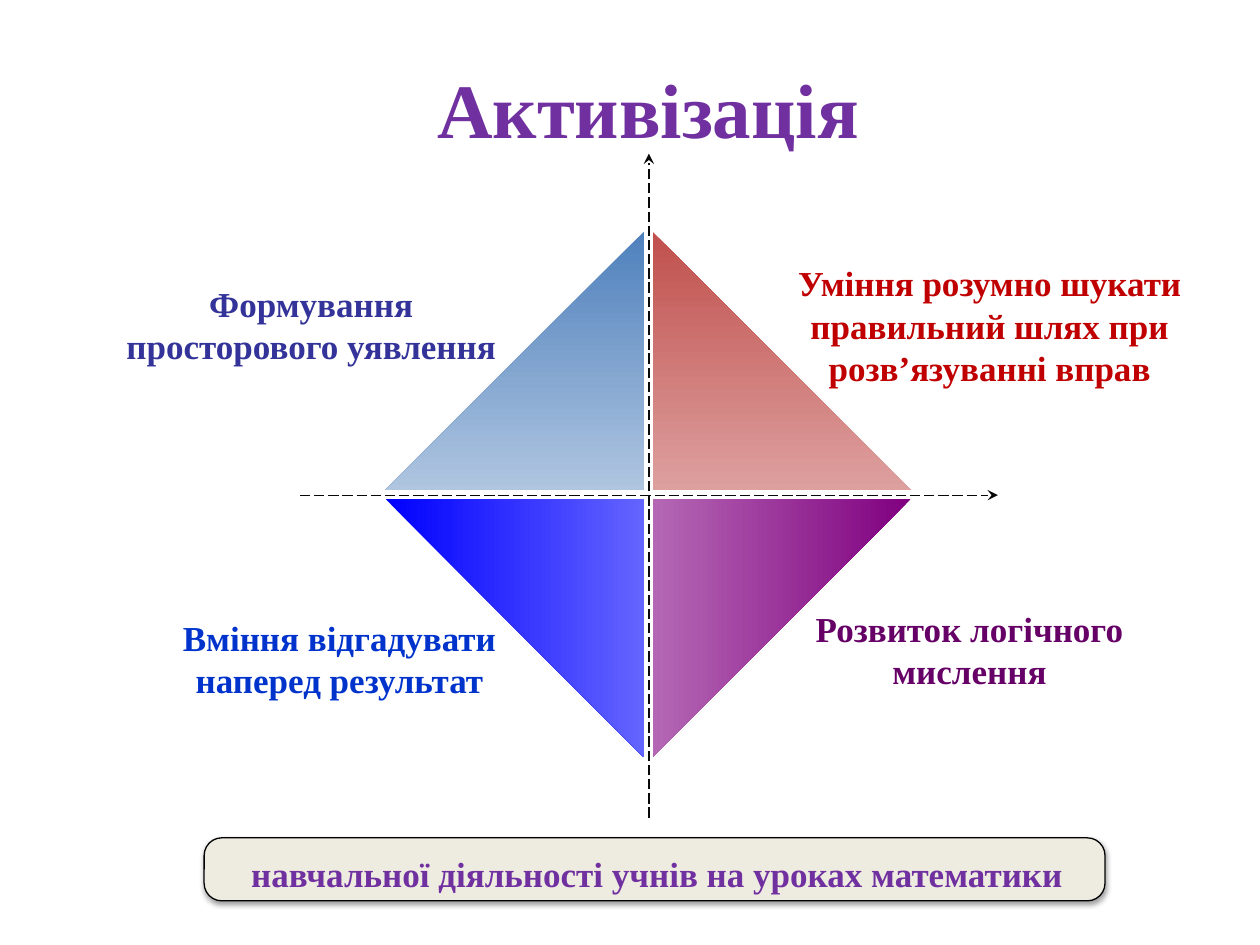
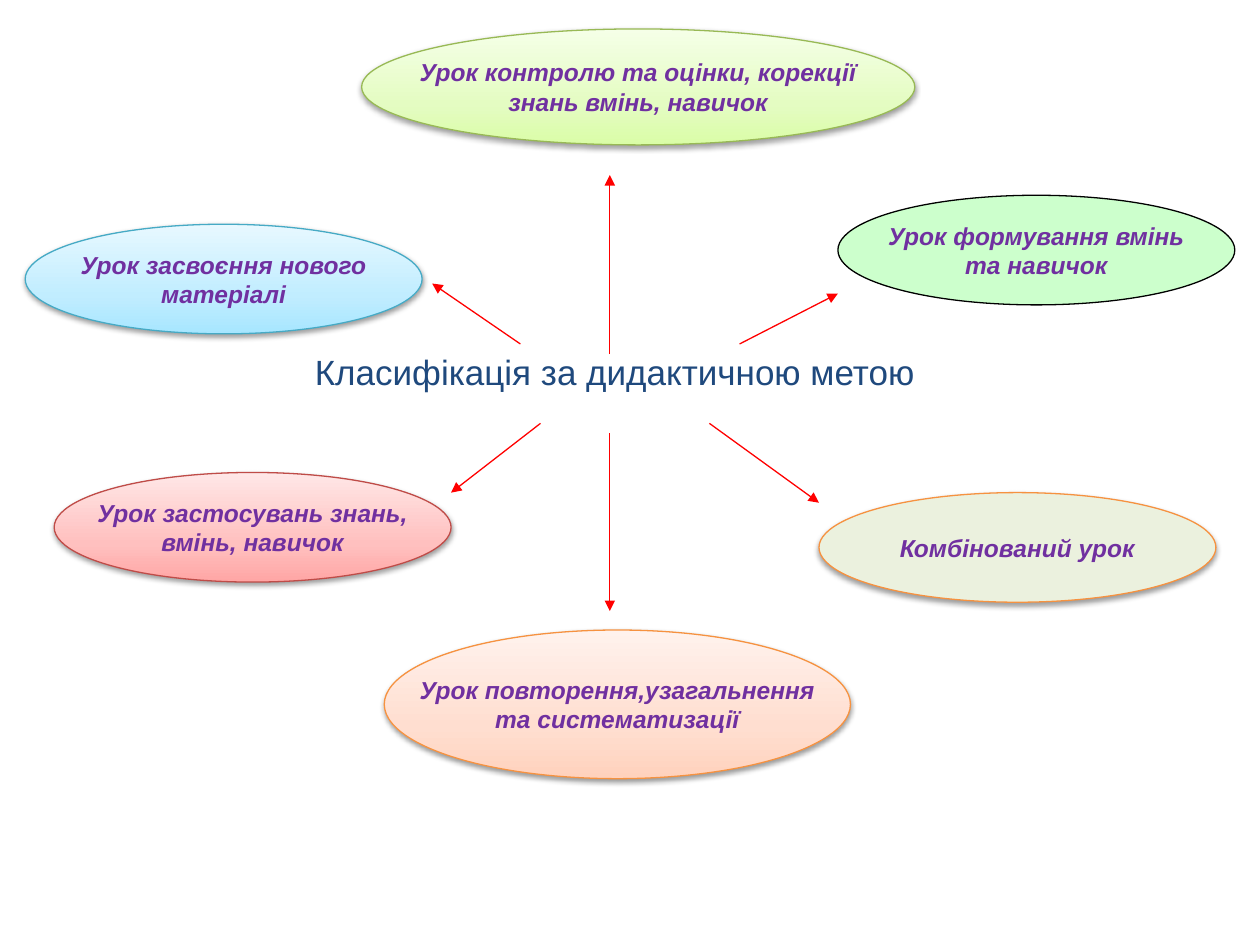
from copy import deepcopy
from dataclasses import dataclass

from lxml.etree import SubElement
from pptx import Presentation
from pptx.dml.color import RGBColor
from pptx.enum.dml import MSO_LINE
from pptx.enum.shapes import MSO_CONNECTOR, MSO_SHAPE
from pptx.enum.text import MSO_ANCHOR, PP_ALIGN
from pptx.oxml.ns import qn
from pptx.shapes.autoshape import Shape
from pptx.slide import Slide
from pptx.text.text import TextFrame
from pptx.util import Inches, Pt

SERIF = "Times New Roman"
SANS = "Arial"
LINE_WIDTH = Pt(0.75)
COLORS = {
    "purple": "7030A0",
    "black": "000000",
    "axis": "080808",
    "arrow": "FF0000",
    "banner": "EEECE1",
    "indigo": "333399",
    "plum": "660066",
    "crimson": "C00000",
    "blue": "0033CC",
    "navy": "1F497D",
    "mint": "CCFFCC",
    "sage": "EBF1DE",
    "orange line": "F69240",
    "red line": "BF4C48",
    "cyan line": "46AAC5",
    "green line": "98B955",
}
GRADIENTS = {
    "steel": ((0, "4F81BD"), (1, "AFC5E0")),
    "brick": ((0, "C0504D"), (1, "DDA09F")),
    "cobalt": ((0, "0000FF"), (1, "6464FF")),
    "violet": ((0, "800080"), (1, "B468B4")),
    "rose": ((0, "FFA6A5"), (0.35, "FFC0BF"), (1, "FFE7E7")),
    "sky": ((0, "A7E6FF"), (0.35, "C1EDFF"), (1, "E7F8FF")),
    "peach": ((0, "FFD2BD"), (0.35, "FFDED0"), (1, "FFF2ED")),
    "lime": ((0, "DAFDA7"), (0.35, "E4FCC2"), (1, "F5FFE7")),
}


@dataclass(frozen=True)
class Box:
    left: float
    top: float
    width: float
    height: float

    def emu(self) -> tuple[int, int, int, int]:
        return (Inches(self.left), Inches(self.top),
                Inches(self.width), Inches(self.height))


@dataclass(frozen=True)
class TextStyle:
    size: float
    color: str
    font: str = SERIF
    bold: bool = True
    italic: bool = False
    align: PP_ALIGN = PP_ALIGN.CENTER


@dataclass(frozen=True)
class Label:
    box: Box
    lines: tuple[str, ...]
    style: TextStyle
    wrap: bool = True
    anchor: MSO_ANCHOR = MSO_ANCHOR.TOP


@dataclass(frozen=True)
class Quarter:
    col: int
    row: int
    fill: str
    rotation: int = 0
    flip: bool = False


@dataclass(frozen=True)
class Lesson:
    box: Box
    fill: str
    line: str
    lines: tuple[str, ...]
    shadow: bool = True


@dataclass(frozen=True)
class Arrow:
    x1: float
    y1: float
    x2: float
    y2: float


QUARTER_SIZE = 2.05
QUARTER_STEP = 2.12
DIAMOND_LEFT, DIAMOND_TOP = 3.06, 1.84
QUARTERS = (
    Quarter(0, 0, "steel", flip=True),
    Quarter(1, 0, "brick"),
    Quarter(1, 1, "violet", rotation=90),
    Quarter(0, 1, "cobalt", rotation=270, flip=True),
)
AXES = (Arrow(5.15, 6.49, 5.15, 1.22), Arrow(2.38, 3.93, 7.92, 3.93))
BANNER = Box(1.62, 6.65, 7.15, 0.5)
ACTIVATION_LABELS = (
    Label(Box(1.8, 0.23, 6.69, 1.25), ("Активізація",),
          TextStyle(44, "purple"), anchor=MSO_ANCHOR.MIDDLE),
    Label(Box(0.7, 2.19, 3.54, 0.77), ("Формування просторового уявлення",),
          TextStyle(20, "indigo")),
    Label(Box(6.02, 2.03, 3.67, 1.11),
          ("Уміння розумно шукати правильний шлях при розв’язуванні вправ",),
          TextStyle(20, "crimson")),
    Label(Box(6.33, 4.77, 2.73, 0.77), ("Розвиток логічного", "мислення"),
          TextStyle(20, "plum"), wrap=False),
    Label(Box(1.33, 4.84, 2.73, 0.77),
          ("Вміння відгадувати", "наперед результат"), TextStyle(20, "blue")),
    Label(Box(1.8, 6.72, 6.83, 0.44),
          ("навчальної діяльності учнів на уроках математики",),
          TextStyle(20, "purple")),
)

LESSON_STYLE = TextStyle(14, "purple", SANS, italic=True)
LESSON_W, LESSON_H = 3.15, 0.87
LESSONS = (
    Lesson(Box(0.43, 3.75, LESSON_W, LESSON_H), "rose", "red line",
           ("Урок застосувань знань,", "вмінь, навичок")),
    Lesson(Box(6.65, 1.55, LESSON_W, LESSON_H), "mint", "black",
           ("Урок формування вмінь", "та навичок"), shadow=False),
    Lesson(Box(0.2, 1.78, LESSON_W, LESSON_H), "sky", "cyan line",
           ("Урок засвоєння нового", "матеріалі")),
    Lesson(Box(3.05, 5, 3.7, 1.18), "peach", "orange line",
           ("Урок повторення,узагальнення", "та систематизації")),
    Lesson(Box(2.87, 0.23, 4.39, 0.92), "lime", "green line",
           ("Урок контролю та оцінки, корекції", "знань вмінь, навичок")),
    Lesson(Box(6.5, 3.91, LESSON_W, LESSON_H), "sage", "orange line",
           ("Комбінований урок",)),
)
LESSON_TOPIC = Label(
    Box(2.4, 2.73, 5.83, 0.43), ("Класифікація за дидактичною метою",),
    TextStyle(20, "navy", SANS, bold=False, align=PP_ALIGN.LEFT))
LESSON_ARROWS = (
    Arrow(4.84, 2.81, 4.84, 1.39),
    Arrow(5.87, 2.73, 6.65, 2.33),
    Arrow(5.63, 3.36, 6.5, 3.99),
    Arrow(4.84, 3.44, 4.84, 4.85),
    Arrow(4.13, 2.73, 3.43, 2.25),
    Arrow(4.29, 3.36, 3.58, 3.91),
)


def rgb(name: str) -> RGBColor:
    return RGBColor.from_string(COLORS[name])


def write(tf: TextFrame, lines: tuple[str, ...], style: TextStyle,
          wrap: bool, anchor: MSO_ANCHOR) -> None:
    tf.word_wrap = wrap
    tf.vertical_anchor = anchor
    for i, line in enumerate(lines):
        p = tf.add_paragraph() if i else tf.paragraphs[0]
        p.text = line
        p.alignment = style.align
        p.font.name = style.font
        p.font.size = Pt(style.size)
        p.font.bold = style.bold
        p.font.italic = style.italic
        p.font.color.rgb = rgb(style.color)


def add_label(s: Slide, label: Label) -> None:
    sp = s.shapes.add_textbox(*label.box.emu())
    write(sp.text_frame, label.lines, label.style, label.wrap, label.anchor)


def fill_gradient(sp: Shape, name: str, angle: int) -> None:
    stops = GRADIENTS[name]
    sp.fill.gradient()
    sp.fill.gradient_angle = angle
    first = sp.element.spPr.find(".//" + qn("a:gs"))
    for _ in stops[2:]:
        first.addnext(deepcopy(first))
    for stop, (position, color) in zip(sp.fill.gradient_stops, stops):
        stop.position = position
        stop.color.rgb = RGBColor.from_string(color)


def add_shadow(sp: Shape) -> None:
    effects = sp.element.spPr.find(qn("a:effectLst"))
    shadow = SubElement(effects, qn("a:outerShdw"), blurRad=str(Pt(3.1)),
                        dist=str(Pt(1.6)), dir="5400000", rotWithShape="0")
    color = SubElement(shadow, qn("a:srgbClr"), val=COLORS["black"])
    SubElement(color, qn("a:alpha"), val="38000")


def add_panel(s: Slide, kind: MSO_SHAPE, box: Box, fill: str,
              line: str | None = None, angle: int = 90,
              shadow: bool = False) -> Shape:
    sp = s.shapes.add_shape(kind, *box.emu())
    sp.shadow.inherit = False
    if fill in GRADIENTS:
        fill_gradient(sp, fill, angle)
    else:
        sp.fill.solid()
        sp.fill.fore_color.rgb = rgb(fill)
    if line:
        sp.line.color.rgb = rgb(line)
        sp.line.width = LINE_WIDTH
    else:
        sp.line.fill.background()
    if shadow:
        add_shadow(sp)
    return sp


def add_arrow(s: Slide, arrow: Arrow, color: str, head: str,
              dash: MSO_LINE | None = None) -> None:
    cxn = s.shapes.add_connector(
        MSO_CONNECTOR.STRAIGHT, Inches(arrow.x1), Inches(arrow.y1),
        Inches(arrow.x2), Inches(arrow.y2))
    cxn.line.color.rgb = rgb(color)
    cxn.line.width = LINE_WIDTH
    if dash:
        cxn.line.dash_style = dash
    spPr = cxn.element.spPr
    SubElement(spPr.find(qn("a:ln")), qn("a:tailEnd"), type=head)
    SubElement(spPr, qn("a:effectLst"))


def add_quarter(s: Slide, quarter: Quarter) -> None:
    box = Box(DIAMOND_LEFT + quarter.col * QUARTER_STEP,
              DIAMOND_TOP + quarter.row * QUARTER_STEP,
              QUARTER_SIZE, QUARTER_SIZE)
    sp = add_panel(s, MSO_SHAPE.RIGHT_TRIANGLE, box, quarter.fill, angle=270)
    sp.rotation = quarter.rotation
    if quarter.flip:
        sp.element.spPr.find(qn("a:xfrm")).set("flipH", "1")


def add_lesson(s: Slide, lesson: Lesson) -> None:
    sp = add_panel(s, MSO_SHAPE.OVAL, lesson.box, lesson.fill, lesson.line,
                   shadow=lesson.shadow)
    write(sp.text_frame, lesson.lines, LESSON_STYLE, False, MSO_ANCHOR.MIDDLE)


def build_activation(s: Slide) -> None:
    banner = add_panel(s, MSO_SHAPE.ROUNDED_RECTANGLE, BANNER, "banner",
                       "black", shadow=True)
    banner.adjustments[0] = 0.28
    for quarter in QUARTERS:
        add_quarter(s, quarter)
    for axis in AXES:
        add_arrow(s, axis, "axis", "stealth", MSO_LINE.LONG_DASH)
    for label in ACTIVATION_LABELS:
        add_label(s, label)


def build_lessons(s: Slide) -> None:
    for lesson in LESSONS:
        add_lesson(s, lesson)
    add_label(s, LESSON_TOPIC)
    for arrow in LESSON_ARROWS:
        add_arrow(s, arrow, "arrow", "triangle")


def main() -> None:
    prs = Presentation()
    prs.slide_width, prs.slide_height = Inches(10), Inches(7.5)
    for build in (build_activation, build_lessons):
        build(prs.slides.add_slide(prs.slide_layouts[6]))
    prs.save("out.pptx")


if __name__ == "__main__":
    main()
